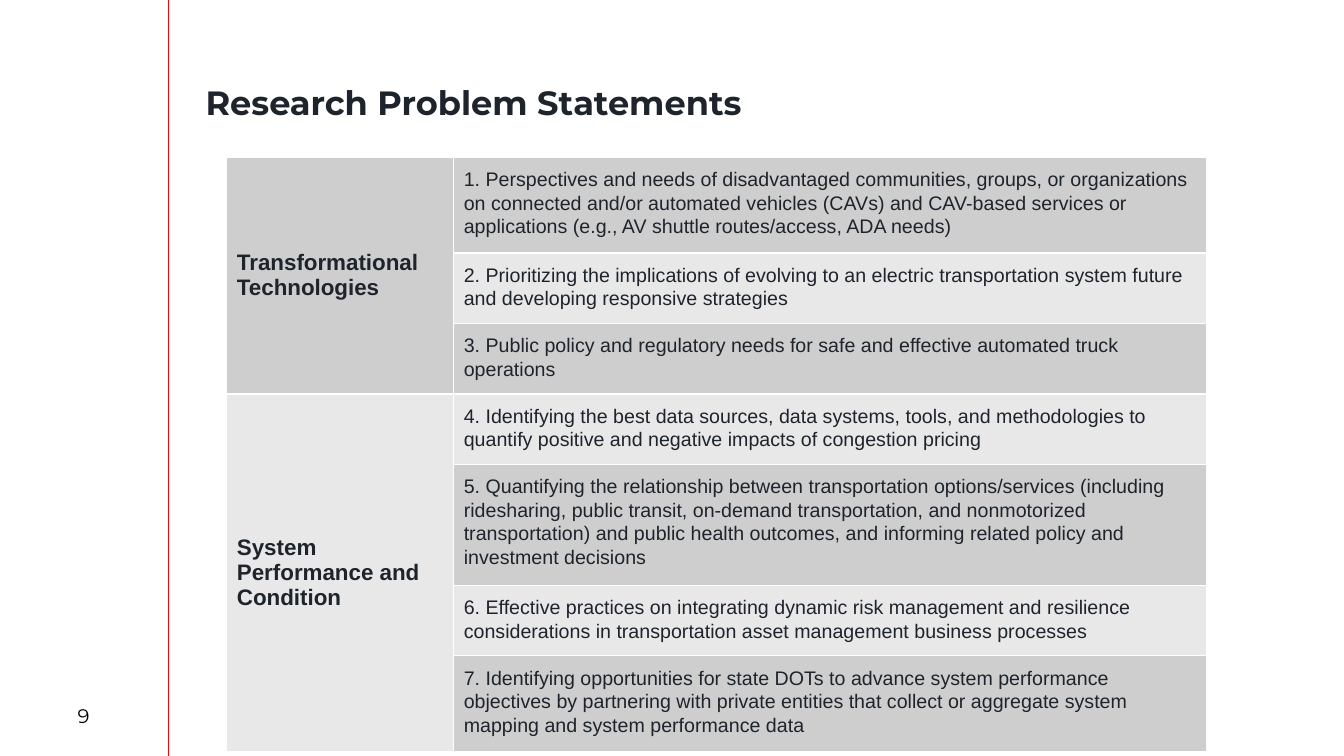
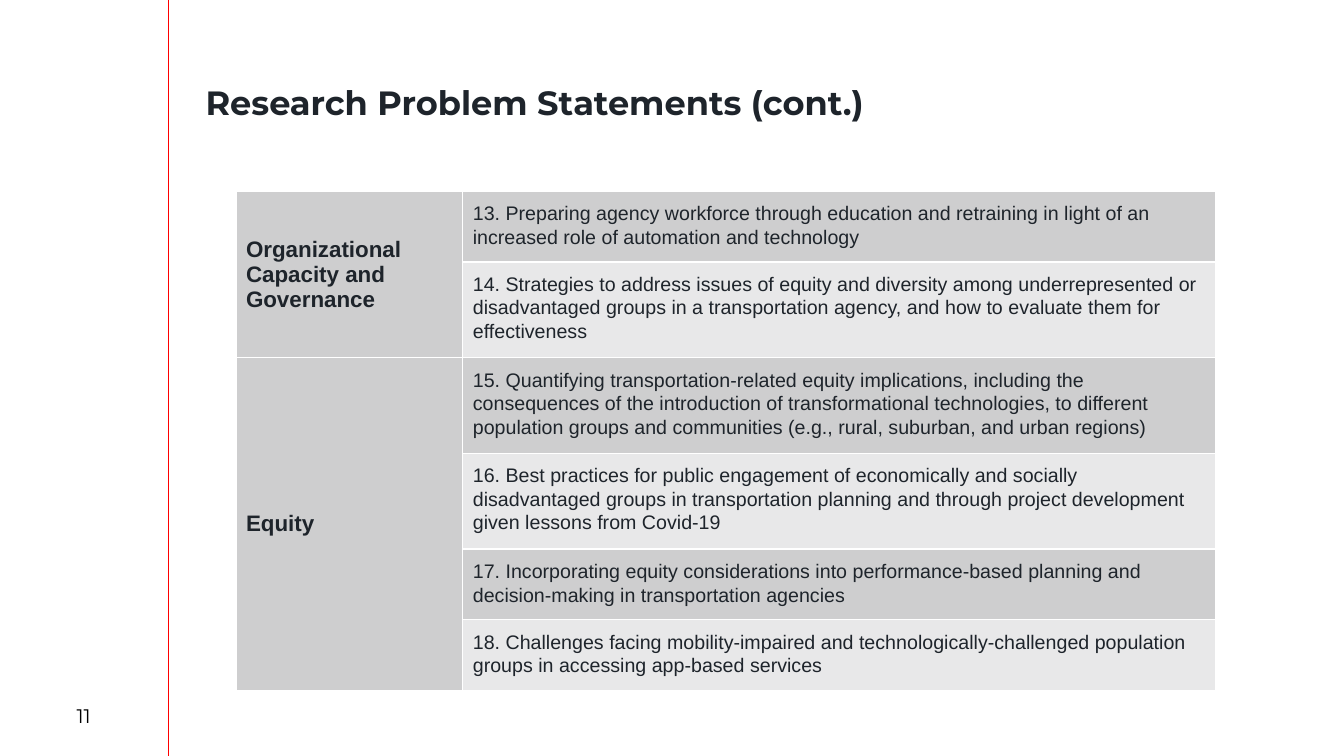
from dataclasses import dataclass

from lxml.etree import SubElement
from pptx import Presentation
from pptx.dml.color import RGBColor
from pptx.enum.shapes import MSO_CONNECTOR
from pptx.enum.text import MSO_ANCHOR as ANCHOR, PP_ALIGN as ALIGN
from pptx.oxml.ns import qn
from pptx.util import Inches, Pt

COLORS = {
    "ink": "1E242B",
    "black": "000000",
    "rule": "FF0000",
    "border": "FFFFFF",
    "dark_band": "CECECF",
    "light_band": "E8E8E9",
}
BANDS = ("dark_band", "light_band")
HEADING_FONT = "Montserrat"
BODY_FONT = "Arial"
COLUMNS = (2.25, 7.47)


@dataclass(frozen=True)
class Statement:
    text: str
    lines: int = 2

    @property
    def height(self) -> float:
        return 0.19 + 0.235 * self.lines


@dataclass(frozen=True)
class Topic:
    name: str
    statements: tuple[Statement, ...]


@dataclass(frozen=True)
class Page:
    number: int
    title: str
    left: float
    top: float
    topics: tuple[Topic, ...]


PAGES = (
    Page(9, "Research Problem Statements", 2.25, 1.56, (
        Topic("Transformational Technologies", (
            Statement("1. Perspectives and needs of disadvantaged communities, groups, or "
                      "organizations on connected and/or automated vehicles (CAVs) and CAV-based "
                      "services or applications (e.g., AV shuttle routes/access, ADA needs)", 3),
            Statement("2. Prioritizing the implications of evolving to an electric transportation "
                      "system future and developing responsive strategies"),
            Statement("3. Public policy and regulatory needs for safe and effective automated "
                      "truck operations"),
        )),
        Topic("System Performance and Condition", (
            Statement("4. Identifying the best data sources, data systems, tools, and "
                      "methodologies to quantify positive and negative impacts of congestion "
                      "pricing"),
            Statement("5. Quantifying the relationship between transportation options/services "
                      "(including ridesharing, public transit, on-demand transportation, and "
                      "nonmotorized transportation) and public health outcomes, and informing "
                      "related policy and investment decisions", 4),
            Statement("6. Effective practices on integrating dynamic risk management and "
                      "resilience considerations in transportation asset management business "
                      "processes"),
            Statement("7. Identifying opportunities for state DOTs to advance system performance "
                      "objectives by partnering with private entities that collect or aggregate "
                      "system mapping and system performance data", 3),
        )),
    )),
    Page(11, "Research Problem Statements (cont.)", 2.34, 1.9, (
        Topic("Organizational Capacity and Governance", (
            Statement("13. Preparing agency workforce through education and retraining in light "
                      "of an increased role of automation and technology"),
            Statement("14. Strategies to address issues of equity and diversity among "
                      "underrepresented or disadvantaged groups in a transportation agency, and "
                      "how to evaluate them for effectiveness", 3),
        )),
        Topic("Equity", (
            Statement("15. Quantifying transportation-related equity implications, including the "
                      "consequences of the introduction of transformational technologies, to "
                      "different population groups and communities (e.g., rural, suburban, and "
                      "urban regions)", 3),
            Statement("16. Best practices for public engagement of economically and socially "
                      "disadvantaged groups in transportation planning and through project "
                      "development given lessons from Covid-19", 3),
            Statement("17. Incorporating equity considerations into performance-based planning "
                      "and decision-making in transportation agencies"),
            Statement("18. Challenges facing mobility-impaired and technologically-challenged "
                      "population groups in accessing app-based services"),
        )),
    )),
)


def rgb(name: str) -> RGBColor:
    return RGBColor.from_string(COLORS[name])


def write(tf, text: str, *, size: float, font: str = BODY_FONT, color: str = "ink",
          bold: bool = False, align=ALIGN.LEFT, line: float = 1.0, gap: float = 0) -> None:
    tf.word_wrap = True
    p = tf.paragraphs[0]
    p.alignment = align
    p.line_spacing = line
    p.space_before = p.space_after = Pt(gap)
    r = p.add_run()
    r.text = text
    r.font.size = Pt(size)
    r.font.name = font
    r.font.bold = bold
    r.font.color.rgb = rgb(color)


def add_box(s, left: float, top: float, width: float, height: float, anchor=ANCHOR.TOP):
    box = s.shapes.add_textbox(Inches(left), Inches(top), Inches(width), Inches(height))
    box.text_frame.vertical_anchor = anchor
    return box.text_frame


def add_frame(s, page: Page) -> None:
    write(add_box(s, 0, 6.9, 1.66, 0.4, ANCHOR.MIDDLE), str(page.number), size=14,
          font=HEADING_FONT, color="black", align=ALIGN.CENTER)
    rule = s.shapes.add_connector(MSO_CONNECTOR.STRAIGHT, Inches(1.67), Inches(0),
                                  Inches(1.67), Inches(7.5))
    rule.line.color.rgb = rgb("rule")
    rule.line.width = Pt(0.75)
    SubElement(rule._element.spPr, qn("a:effectLst"))
    write(add_box(s, 1.94, 0.76, 6.9, 0.94), page.title, size=24, font=HEADING_FONT, bold=True)


def style_cell(cell, fill: str) -> None:
    tc_pr = cell._tc.get_or_add_tcPr()
    for side in ("lnL", "lnR", "lnT", "lnB"):
        ln = SubElement(tc_pr, qn(f"a:{side}"), w=str(Pt(1)))
        solid = SubElement(ln, qn("a:solidFill"))
        SubElement(solid, qn("a:srgbClr"), val=COLORS["border"])
    cell.fill.solid()
    cell.fill.fore_color.rgb = rgb(fill)


def add_statement_table(s, page: Page) -> None:
    statements = [st for topic in page.topics for st in topic.statements]
    height = sum(st.height for st in statements)
    table = s.shapes.add_table(len(statements), len(COLUMNS), Inches(page.left),
                               Inches(page.top), Inches(sum(COLUMNS)), Inches(height)).table
    table.first_row = table.horz_banding = False
    for column, width in zip(table.columns, COLUMNS):
        column.width = Inches(width)

    first = 0
    for topic in page.topics:
        last = first + len(topic.statements) - 1
        for i, st in enumerate(topic.statements, first):
            table.rows[i].height = Inches(st.height)
            style_cell(table.cell(i, 0), BANDS[first % 2])
            cell = table.cell(i, 1)
            style_cell(cell, BANDS[i % 2])
            cell.margin_left = cell.margin_right = Inches(0.1)
            cell.margin_top = cell.margin_bottom = Inches(0.1)
            write(cell.text_frame, st.text, size=14, line=1.07, gap=3)
        heading = table.cell(first, 0)
        heading.merge(table.cell(last, 0))
        heading.vertical_anchor = ANCHOR.MIDDLE
        write(heading.text_frame, topic.name, size=16, bold=True)
        first = last + 1


def main() -> None:
    prs = Presentation()
    prs.slide_width, prs.slide_height = Inches(13.33), Inches(7.5)
    for page in PAGES:
        s = prs.slides.add_slide(prs.slide_layouts[6])
        add_frame(s, page)
        add_statement_table(s, page)
    prs.save("out.pptx")


if __name__ == "__main__":
    main()
